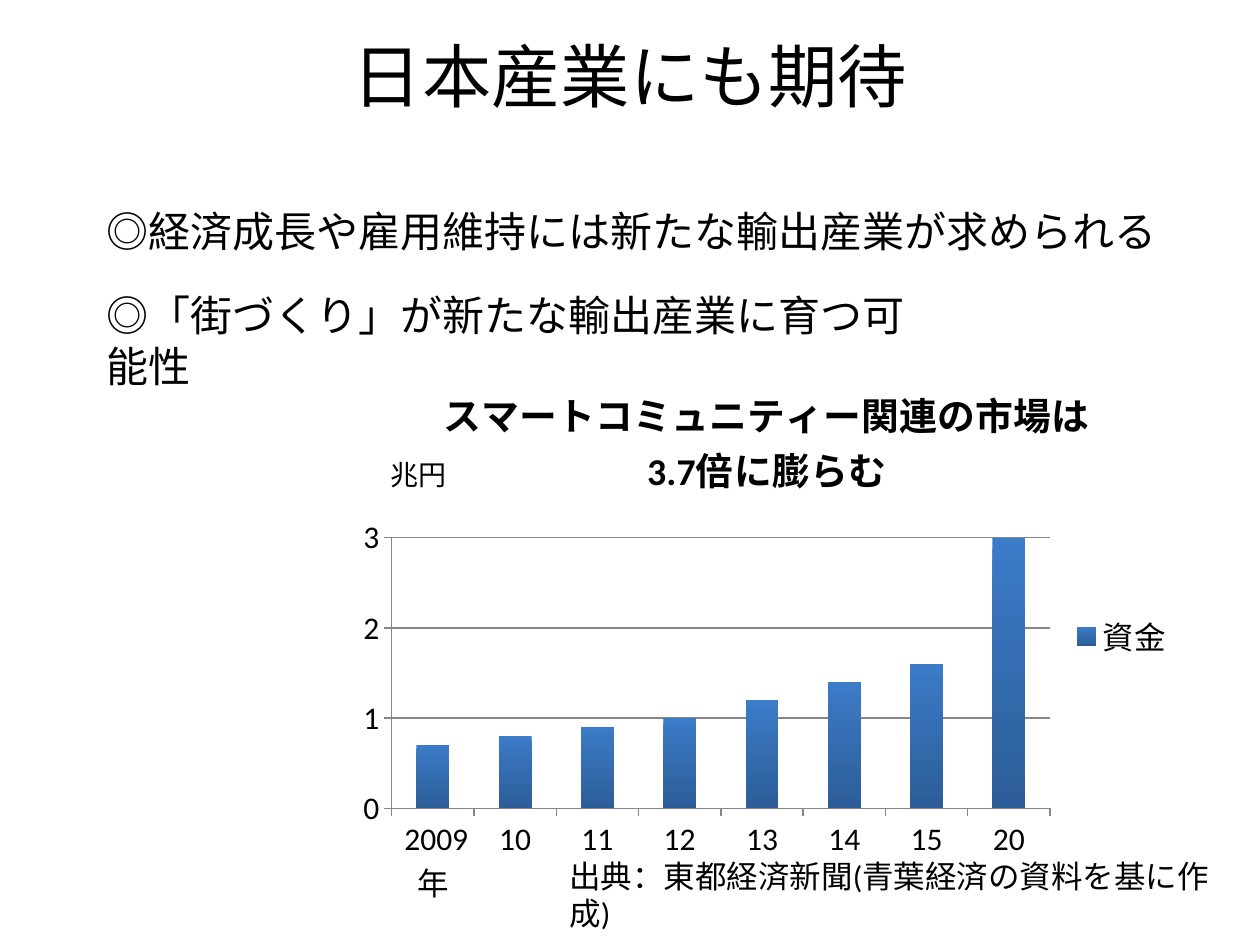
import pptx
import pptx.chart.data
import pptx.dml.color
import pptx.enum.chart
import pptx.enum.text
import pptx.util
from pptx.util import Inches

FONT = "Calibri"


def color(hex_string):
    return pptx.dml.color.RGBColor.from_string(hex_string)


def style(font, size, bold=False):
    font.name = FONT
    font.size = pptx.util.Pt(size)
    font.bold = bold
    font.color.rgb = color("000000")


deck = pptx.Presentation()
deck.slide_width, deck.slide_height = Inches(10), Inches(7.5)
page = deck.slides.add_slide(deck.slide_layouts[5])

# Title, followed by an empty second line
title = page.shapes.title
title.left, title.top = Inches(0.5), Inches(0.3)
title.width, title.height = Inches(9), Inches(1.25)
title.text_frame.vertical_anchor = pptx.enum.text.MSO_ANCHOR.MIDDLE
para = title.text_frame.paragraphs[0]
para.alignment = pptx.enum.text.PP_ALIGN.CENTER
para.add_run().text = "日本産業にも期待"
para.add_line_break()
style(para.font, 39.6)
style(para.runs[0].font, 39.6)

# Market chart
data = pptx.chart.data.CategoryChartData()
data.categories = [" 2009年", "10", "11", "12", "13", "14", "15", "20"]
data.add_series("資金", [0.7, 0.8, 0.9, 1, 1.2, 1.4, 1.6, 3.2])
chart = page.shapes.add_chart(
    pptx.enum.chart.XL_CHART_TYPE.COLUMN_STACKED,
    Inches(2.75), Inches(2.83), Inches(6.67), Inches(4.44), data).chart
style(chart.font, 18)

chart.has_title = True
heading = chart.chart_title.text_frame
heading.text = "スマートコミュニティー関連の市場は3.7倍に膨らむ"
style(heading.paragraphs[0].font, 21.6, bold=True)

chart.has_legend = True
chart.legend.position = pptx.enum.chart.XL_LEGEND_POSITION.RIGHT
chart.legend.include_in_layout = False

# Columns with a vertical gradient
plot = chart.plots[0]
plot.gap_width, plot.overlap = 150, 100
plot.vary_by_categories = False
fill = plot.series[0].format.fill
fill.gradient()
fill.gradient_angle = 270
for stop, shade in zip(fill.gradient_stops, ["3C7BC7", "2C5D98"]):
    stop.color.rgb = color(shade)

# Axes
values = chart.value_axis
values.minimum_scale, values.maximum_scale, values.major_unit = 0, 3, 1
values.has_major_gridlines = True
values.major_gridlines.format.line.color.rgb = color("868686")
for axis in (chart.category_axis, values):
    axis.major_tick_mark = pptx.enum.chart.XL_TICK_MARK.OUTSIDE
    axis.format.line.color.rgb = color("868686")

# Unit, source and the two points
notes = [
    ("兆円", 3, 3.58, 0.75, 0.37, 16),
    ("出典：東都経済新聞(青葉経済の資料を基に作成)", 4.42, 6.75, 5.58, 0.4, 18),
    ("◎「街づくり」が新たな輸出産業に育つ可能性", 0.75, 2.25, 6.67, 0.5, 24),
    ("◎経済成長や雇用維持には新たな輸出産業が求められる", 0.75, 1.58, 8.58, 0.5, 24),
]
for text, left, top, width, height, size in notes:
    box = page.shapes.add_textbox(
        Inches(left), Inches(top), Inches(width), Inches(height))
    box.text_frame.word_wrap = True
    box.text_frame.auto_size = pptx.enum.text.MSO_AUTO_SIZE.SHAPE_TO_FIT_TEXT
    para = box.text_frame.paragraphs[0]
    para.text = text
    style(para.font, size)

deck.save("out.pptx")
